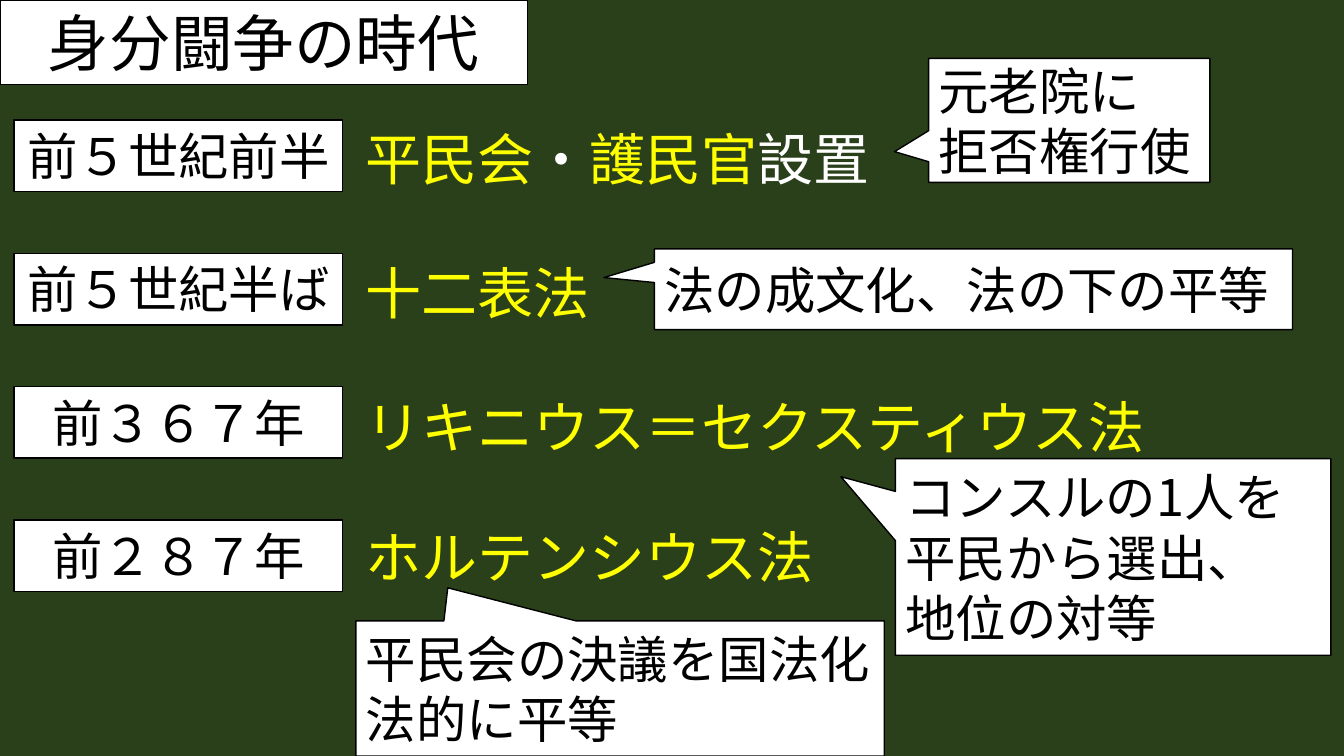
"""Build a slide on the Roman struggle of the orders."""
from lxml import etree
from pptx import Presentation
from pptx.dml.color import RGBColor
from pptx.enum import shapes, text
from pptx.oxml import ns
from pptx.util import Inches, Pt

FONT = "Noto Sans CJK JP"
BLACK, WHITE, YELLOW = "000000", "FFFFFF", "FFFF00"


def paint(target, colour):
    """Give a fill a solid colour."""
    target.solid()
    target.fore_color.rgb = RGBColor.from_string(colour)


def write(box, lines, size, align, anchor, grow, framed=True):
    """Write lines of (words, colour) spans into a box, framed in white or bare."""
    if framed:
        paint(box.fill, WHITE)
        paint(box.line.fill, BLACK)
        box.line.width = Pt(1)
        box.shadow.inherit = False
    frame = box.text_frame
    frame.word_wrap = True
    frame.vertical_anchor = anchor
    frame.auto_size = text.MSO_AUTO_SIZE.SHAPE_TO_FIT_TEXT if grow else text.MSO_AUTO_SIZE.NONE
    for number, spans in enumerate(lines):
        para = frame.add_paragraph() if number else frame.paragraphs[0]
        para.alignment = align
        para.font.size = Pt(size)
        para.font.name = FONT
        for words, colour in spans:
            span = para.add_run()
            span.text = words
            paint(span.font.fill, colour)
            etree.SubElement(span.font._element, ns.qn("a:ea"), typeface=FONT)


deck = Presentation()
deck.slide_width, deck.slide_height = Inches(13.33), Inches(7.5)
page = deck.slides.add_slide(deck.slide_layouts[5])
paint(page.background.fill, "29401A")
left, center = text.PP_ALIGN.LEFT, text.PP_ALIGN.CENTER
top, middle = text.MSO_ANCHOR.TOP, text.MSO_ANCHOR.MIDDLE

title = page.shapes.title
title.left, title.top, title.width, title.height = map(Inches, (0, 0, 5.23, 0.84))
write(title, [[("身分闘争の時代", BLACK)]], 44, center, top, True)

events = [
    ("前５世紀前半", 1.19, 5.35,
     [("平民会", YELLOW), ("・", WHITE), ("護民官", YELLOW), ("設置", WHITE)]),
    ("前５世紀半ば", 2.52, 2.72, [("十二表法", YELLOW)]),
    ("前３６７年", 3.84, 8.14, [("リキニウス＝セクスティウス法", YELLOW)]),
    ("前２８７年", 5.13, 4.79, [("ホルテンシウス法", YELLOW)]),
]
for row, (date, event_top, width, spans) in enumerate(events):
    date_box = page.shapes.add_shape(
        shapes.MSO_SHAPE.RECTANGLE,
        Inches(0.14), Inches(1.19 + 1.323 * row), Inches(3.26), Inches(0.71))
    write(date_box, [[(date, BLACK)]], 36, center, top, True)
    event_box = page.shapes.add_textbox(
        Inches(3.53), Inches(event_top), Inches(width), Inches(0.77))
    write(event_box, [spans], 40, left, top, True, framed=False)

notes = [
    ((9.21, 0.58, 2.79, 1.23), (-0.621, 0.252), ["元老院に", "拒否権行使"]),
    ((6.49, 2.47, 6.33, 0.8), (-0.579, -0.145), ["法の成文化、法の下の平等"]),
    ((8.88, 4.55, 4.32, 1.95), (-0.625, -0.408),
     ["コンスルの1人を平民から選出、", "地位の対等"]),
    ((3.53, 6.16, 5.24, 1.34), (-0.326, -0.745), ["平民会の決議を国法化", "法的に平等"]),
]
for place, tip, lines in notes:
    callout = page.shapes.add_shape(
        shapes.MSO_SHAPE.RECTANGULAR_CALLOUT, *map(Inches, place))
    callout.adjustments[0], callout.adjustments[1] = tip
    write(callout, [[(line, BLACK)] for line in lines], 36, left, middle, False)

deck.save("out.pptx")
